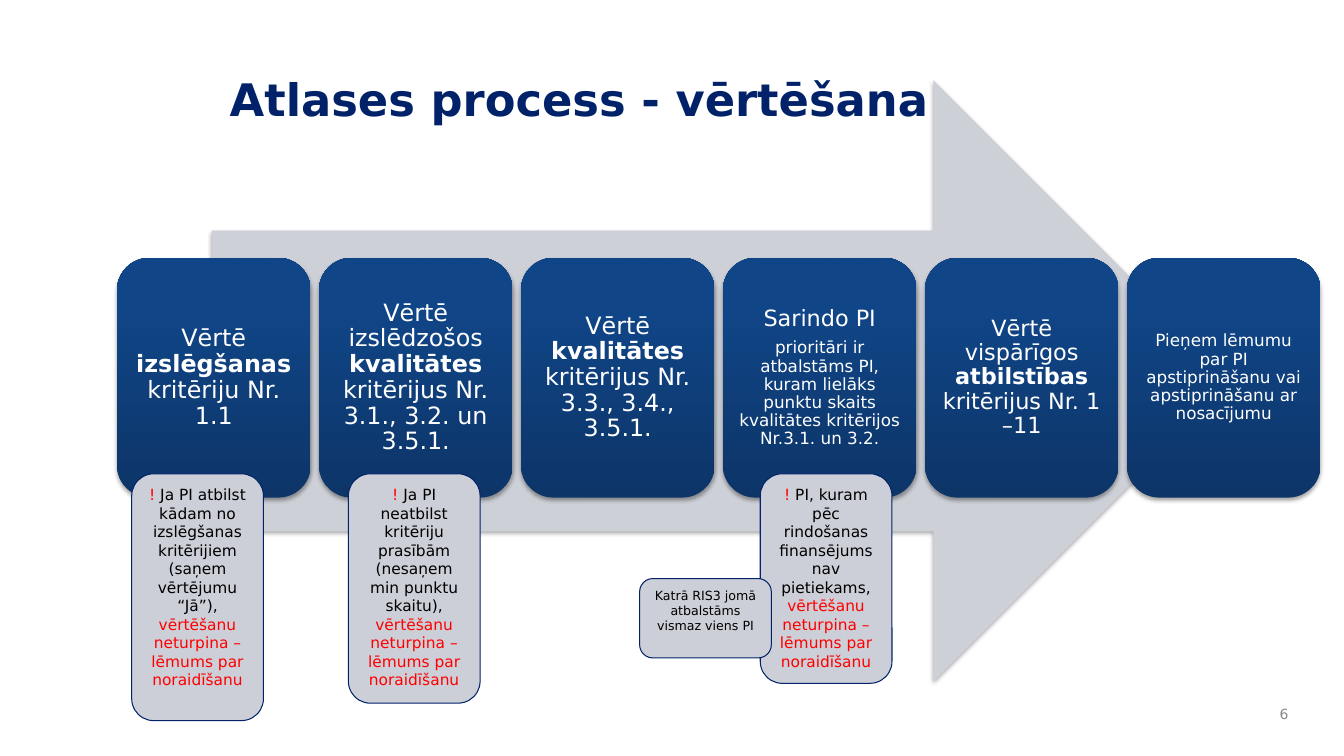
from lxml.etree import SubElement
from pptx import Presentation
from pptx.dml.color import RGBColor
from pptx.enum.shapes import MSO_SHAPE
from pptx.enum.text import MSO_ANCHOR, PP_ALIGN
from pptx.oxml.ns import qn
from pptx.util import Cm, Pt

# Content: a paragraph is (size, runs), a run is (text, style)
TITLE = "Atlases process - vērtēšana"
NUMBER = "6"
STEPS = [
    [(17, [("Vērtē ", "step"), ("izslēgšanas", "bold"),
           (" kritēriju Nr. 1.1", "step")])],
    [(17, [("Vērtē izslēdzošos ", "step"), ("kvalitātes", "bold"),
           (" kritērijus Nr. 3.1., 3.2. un 3.5.1.", "step")])],
    [(17, [("Vērtē ", "step"), ("kvalitātes", "bold"),
           (" kritērijus Nr. 3.3., 3.4., 3.5.1.", "step")])],
    [(16, [("Sarindo PI", "step")]),
     (12, [("prioritāri ir atbalstāms PI, kuram lielāks punktu skaits "
            "kvalitātes kritērijos Nr.3.1. un 3.2.", "step")])],
    [(16, [("Vērtē vispārīgos ", "step"), ("atbilstības", "bold"),
           (" kritērijus Nr. 1 –11", "step")])],
    [(12, [("Pieņem lēmumu par PI apstiprināšanu vai apstiprināšanu "
            "ar nosacījumu", "step")])],
]
STOP = "vērtēšanu neturpina – lēmums par noraidīšanu"
# Left, height and reason of each rejection note
NOTES = [
    (3.32, 6.22, "Ja PI atbilst kādam no izslēgšanas kritērijiem "
                 "(saņem vērtējumu “Jā”), "),
    (8.78, 5.78, "Ja PI neatbilst kritēriju prasībām "
                 "(nesaņem min punktu skaitu), "),
    (19.16, 5.28, "PI, kuram pēc rindošanas finansējums nav pietiekams, "),
]
AREA = "Katrā RIS3 jomā atbalstāms vismaz viens PI"

THEME = {
    "font": "DejaVu Sans",
    "arrow": "CDD0D7", "note": "CCCFD7", "edge": "012269",
    "blend": [(0, "0D3568"), (80, "104587"), (100, "0E458A")],
    "ink": {"step": "FFFFFF", "bold": "FFFFFF", "title": "012269",
            "alert": "FF0000", "plain": "000000", "page": "898989"},
    "strong": ("bold", "title"),
    "size": {"title": 32, "note": 11, "area": 9, "page": 10},
}
SIZE = THEME["size"]

# Layout in centimetres
LEFT, TOP, WIDTH, HIGH, PITCH = 2.95, 6.5, 4.88, 6.04, 5.09
NOTE_TOP, NOTE_WIDE = 11.94, 3.32


def color(name):
    return RGBColor.from_string(name)


def write(shape, paras, align, anchor, pad=(0.25, 0.13), tight=False):
    frame = shape.text_frame
    frame.word_wrap = True
    frame.vertical_anchor = anchor
    frame.margin_left = frame.margin_right = Cm(pad[0])
    frame.margin_top = frame.margin_bottom = Cm(pad[1])
    for i, (size, runs) in enumerate(paras):
        para = frame.add_paragraph() if i else frame.paragraphs[0]
        para.alignment = align
        if tight:
            para.line_spacing = 0.9
            para.space_after = Pt(size * 0.35)
        for text, style in runs:
            run = para.add_run()
            run.text = text
            run.font.name = THEME["font"]
            run.font.size = Pt(size)
            run.font.bold = style in THEME["strong"]
            run.font.color.rgb = color(THEME["ink"][style])


def shade(shape):
    effect = shape._element.spPr.find(qn("a:effectLst"))
    drop = SubElement(effect, qn("a:outerShdw"), blurRad="40000", dist="23000",
                      dir="5400000", rotWithShape="0")
    tint = SubElement(drop, qn("a:srgbClr"), val="000000")
    SubElement(tint, qn("a:alpha"), val="35000")


def blend(shape):
    shape.fill.gradient()
    shape.fill.gradient_angle = 90
    stops = shape._element.spPr.find(qn("a:gradFill")).find(qn("a:gsLst"))
    for old in list(stops):
        stops.remove(old)
    for place, tone in THEME["blend"]:
        stop = SubElement(stops, qn("a:gs"), pos=str(place * 1000))
        SubElement(stop, qn("a:srgbClr"), val=tone)


def draw(slide, kind, box, fill=None, edge=None):
    shape = slide.shapes.add_shape(kind, *map(Cm, box))
    if fill:
        shape.fill.solid()
        shape.fill.fore_color.rgb = color(fill)
    else:
        blend(shape)
    shape.shadow.inherit = False
    if edge:
        shape.line.color.rgb = color(edge)
        shape.line.width = Pt(0.75)
    else:
        shape.line.fill.background()
        shade(shape)
    return shape


def note(slide, box, size, runs):
    shape = draw(slide, MSO_SHAPE.ROUNDED_RECTANGLE, box,
                 THEME["note"], THEME["edge"])
    write(shape, [(size, runs)], PP_ALIGN.CENTER, MSO_ANCHOR.TOP)


def label(slide, box, text, style, align, anchor):
    shape = slide.shapes.add_textbox(*map(Cm, box))
    write(shape, [(SIZE[style], [(text, style)])], align, anchor)


def main():
    deck = Presentation()
    deck.slide_width, deck.slide_height = Cm(33.87), Cm(19.05)
    slide = deck.slides.add_slide(deck.slide_layouts[6])

    # Page number and background arrow
    label(slide, (31.6, 17.58, 1.12, 0.84), NUMBER, "page",
          PP_ALIGN.RIGHT, MSO_ANCHOR.MIDDLE)
    draw(slide, MSO_SHAPE.RIGHT_ARROW, (5.34, 2.02, 25.76, 15.16),
         THEME["arrow"])

    # Process steps
    for i, paras in enumerate(STEPS):
        step = draw(slide, MSO_SHAPE.ROUNDED_RECTANGLE,
                    (LEFT + i * PITCH, TOP, WIDTH, HIGH))
        write(step, paras, PP_ALIGN.CENTER, MSO_ANCHOR.MIDDLE,
              (0.17, 0.17) if paras[0][0] > 12 else (0.13, 0.13), True)

    # Rejection notes
    for left, high, reason in NOTES:
        note(slide, (left, NOTE_TOP, NOTE_WIDE, high), SIZE["note"],
             [("! ", "alert"), (reason, "plain"), (STOP, "alert")])

    # Title and area note
    label(slide, (5.54, 1.68, 24.5, 2.16), TITLE, "title",
          PP_ALIGN.LEFT, MSO_ANCHOR.TOP)
    note(slide, (16.12, 14.58, NOTE_WIDE, 2), SIZE["area"],
         [(AREA, "plain")])

    deck.save("out.pptx")


if __name__ == "__main__":
    main()
